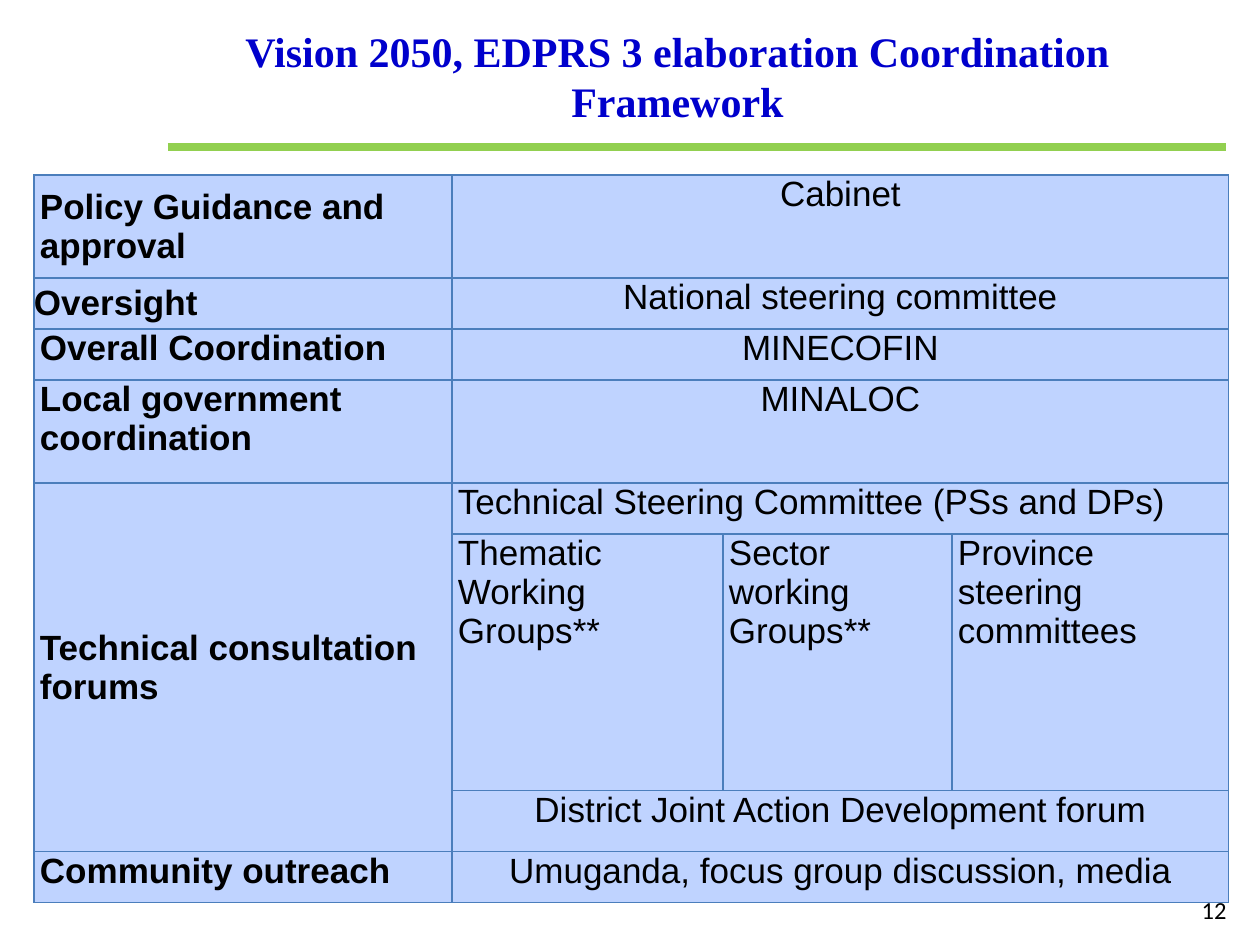
import pptx
import pptx.dml.color
import pptx.enum.shapes
import pptx.enum.text
import pptx.oxml
import pptx.oxml.ns
import pptx.util

PX = 914400 / 126
ALIGN = pptx.enum.text.PP_ALIGN
ANCHOR = pptx.enum.text.MSO_ANCHOR

COLUMNS = [418, 271, 229, 277]
ROWS = [103, 51, 51, 103, 51, 257, 61, 51]
INSET = 6

# row, column, rows spanned, columns spanned, text, alignment, anchor
CELLS = [
    (0, 0, 1, 1, "Policy Guidance and approval", ALIGN.LEFT, ANCHOR.MIDDLE),
    (0, 1, 1, 3, "Cabinet", ALIGN.CENTER, ANCHOR.TOP),
    (1, 0, 1, 1, "Oversight", ALIGN.LEFT, ANCHOR.MIDDLE),
    (1, 1, 1, 3, "National steering committee", ALIGN.CENTER, ANCHOR.TOP),
    (2, 0, 1, 1, "Overall Coordination", ALIGN.LEFT, ANCHOR.TOP),
    (2, 1, 1, 3, "MINECOFIN", ALIGN.CENTER, ANCHOR.TOP),
    (3, 0, 1, 1, "Local government coordination", ALIGN.LEFT, ANCHOR.TOP),
    (3, 1, 1, 3, "MINALOC", ALIGN.CENTER, ANCHOR.TOP),
    (4, 0, 3, 1, "Technical consultation forums", ALIGN.LEFT, ANCHOR.MIDDLE),
    (4, 1, 1, 3, "Technical Steering Committee (PSs and DPs)", ALIGN.LEFT, ANCHOR.TOP),
    (5, 1, 1, 1, "Thematic Working Groups**", ALIGN.LEFT, ANCHOR.TOP),
    (5, 2, 1, 1, "Sector working Groups**", ALIGN.LEFT, ANCHOR.TOP),
    (5, 3, 1, 1, "Province steering committees", ALIGN.LEFT, ANCHOR.TOP),
    (6, 1, 1, 3, "District Joint Action Development forum", ALIGN.CENTER, ANCHOR.TOP),
    (7, 0, 1, 1, "Community outreach", ALIGN.LEFT, ANCHOR.TOP),
    (7, 1, 1, 3, "Umuganda, focus group discussion, media", ALIGN.CENTER, ANCHOR.TOP),
]


def px(length):
    return pptx.util.Emu(round(length * PX))


def color(value):
    return pptx.dml.color.RGBColor.from_string(value)


def write(frame, text, font, size, ink, align, bold=False):
    frame.text = text
    para = frame.paragraphs[0]
    para.alignment = align
    for span in para.runs:
        span.font.name = font
        span.font.size = pptx.util.Pt(size)
        span.font.bold = bold
        span.font.color.rgb = color(ink)


def add_text(page, box, *style, **options):
    frame = page.shapes.add_textbox(*map(px, box)).text_frame
    frame.word_wrap = True
    frame.vertical_anchor = ANCHOR.MIDDLE
    write(frame, *style, **options)


def add_rule(page, left, right, top):
    rule = page.shapes.add_connector(
        pptx.enum.shapes.MSO_CONNECTOR.STRAIGHT, px(left), px(top), px(right), px(top))
    rule.line.color.rgb = color("92D050")
    rule.line.width = pptx.util.Pt(4.5)
    pptx.oxml.ns.qn("a:effectLst")
    properties = rule._element.spPr
    properties.append(properties.makeelement(pptx.oxml.ns.qn("a:effectLst"), {}))


def style_cell(cell):
    """Gives a cell its insets, thin blue borders and light fill."""
    cell.margin_left = cell.margin_right = px(INSET)
    cell.margin_top = cell.margin_bottom = 0
    properties = cell._tc.get_or_add_tcPr()
    for side in ("lnL", "lnR", "lnT", "lnB"):
        properties.append(pptx.oxml.parse_xml(
            f'<a:{side} {pptx.oxml.ns.nsdecls("a")} w="{pptx.util.Pt(0.75)}">'
            f'<a:solidFill><a:srgbClr val="4B7EBC"/></a:solidFill></a:{side}>'))
    cell.fill.solid()
    cell.fill.fore_color.rgb = color("BFD3FF")


def add_framework(page, left, top):
    """Places the table of coordination levels and the bodies in charge."""
    box = map(px, (left, top, sum(COLUMNS), sum(ROWS)))
    table = page.shapes.add_table(len(ROWS), len(COLUMNS), *box).table
    table.first_row = table.horz_banding = False
    for column, width in zip(table.columns, COLUMNS):
        column.width = px(width)
    for row, height in zip(table.rows, ROWS):
        row.height = px(height)
    for cell in table.iter_cells():
        style_cell(cell)
    for row, column, height, width, text, align, anchor in CELLS:
        cell = table.cell(row, column)
        if height * width > 1:
            cell.merge(table.cell(row + height - 1, column + width - 1))
        cell.vertical_anchor = anchor
        write(cell.text_frame, text, "Arial", 20, "000000", align, bold=column == 0)
    oversight = table.cell(1, 0)
    oversight.margin_left = oversight.margin_right = 0


def main():
    deck = pptx.Presentation()
    deck.slide_width, deck.slide_height = px(1260), px(945)
    page = deck.slides.add_slide(deck.slide_layouts[6])
    add_text(page, (966, 885, 273, 50), "12", "Calibri", 14, "000000", ALIGN.RIGHT)
    add_rule(page, 168, 1226, 147)
    add_text(page, (147, 32, 1061, 88),
             "Vision 2050, EDPRS 3 elaboration Coordination Framework",
             "Times New Roman", 24, "0000CC", ALIGN.CENTER, bold=True)
    add_framework(page, 34, 175)
    deck.save("out.pptx")


if __name__ == "__main__":
    main()
